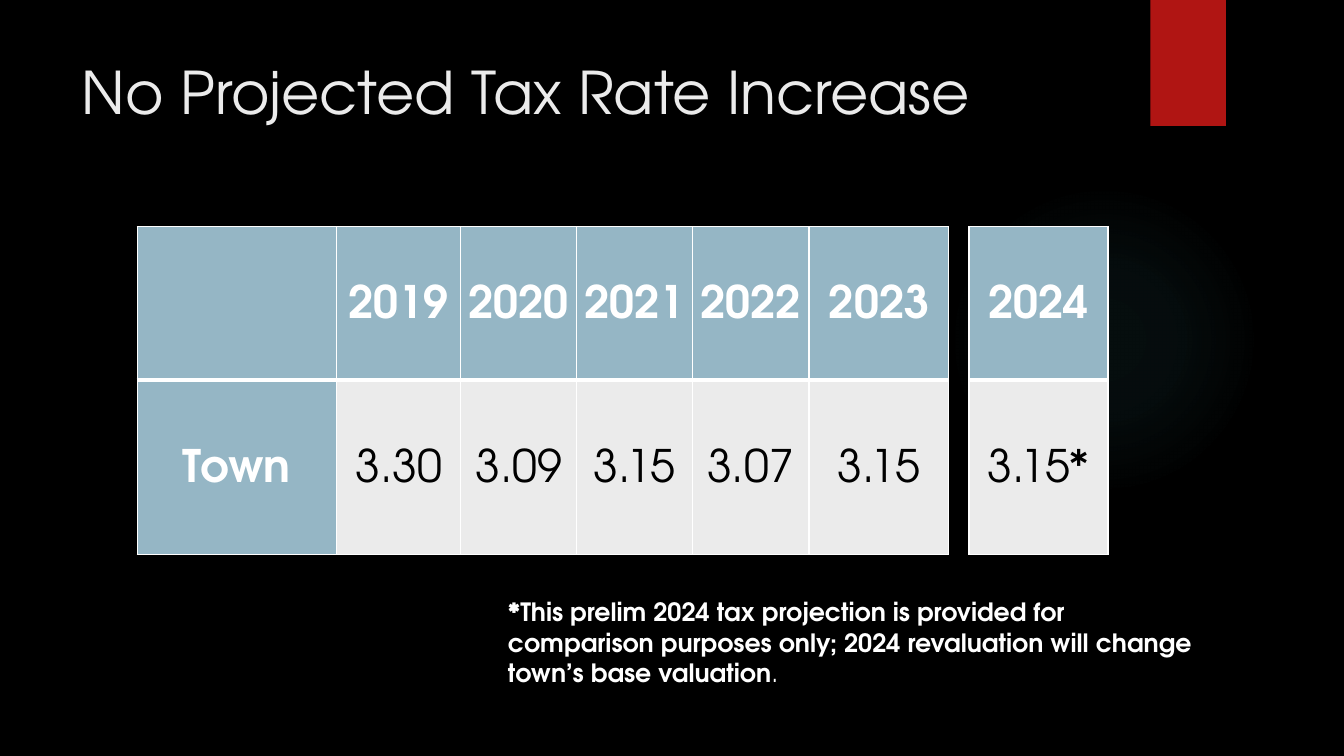
from pptx import Presentation, oxml, util as u
from pptx.dml.color import RGBColor
from pptx.enum import shapes, text
from pptx.oxml import ns

PX = 9144
FONT = "TeX Gyre Adventor"
COLORS = {
    "background": "000000",
    "glow": "50B9C1",
    "ribbon": "B01513",
    "title": "EBEBEB",
    "header": "95B6C5",
    "body": "EBEBEB",
    "light": "FFFFFF",
    "dark": "000000",
}


def px(*lengths):
    return [u.Emu(length * PX) for length in lengths]


def write(paragraph, content, size, color, bold=False):
    run = paragraph.add_run()
    run.text = content
    run.font.name = FONT
    run.font.size = u.Pt(size)
    run.font.bold = bold
    run.font.color.rgb = RGBColor.from_string(COLORS[color])


presentation = Presentation()
presentation.slide_width, presentation.slide_height = px(1333, 750)
slide = presentation.slides.add_slide(presentation.slide_layouts[6])
slide.background.fill.solid()
slide.background.fill.fore_color.rgb = RGBColor.from_string(COLORS["background"])

glow = slide.shapes.add_shape(shapes.MSO_SHAPE.OVAL, *px(941, 183, 308, 308))
glow.shadow.inherit = False
glow.line.fill.background()
stops = "".join(
    f'<a:gs pos="{position * 1000}"><a:srgbClr val="{COLORS["glow"]}">'
    f'<a:alpha val="{alpha * 1000}"/></a:srgbClr></a:gs>'
    for position, alpha in [(0, 7), (36, 6), (69, 0)]
)
gradient = oxml.parse_xml(
    f'<a:gradFill {ns.nsdecls("a")}><a:gsLst>{stops}</a:gsLst><a:path path="circle">'
    '<a:fillToRect l="50000" t="50000" r="50000" b="50000"/></a:path></a:gradFill>'
)
glow.element.spPr.find(ns.qn("a:prstGeom")).addnext(gradient)

ribbon = slide.shapes.add_shape(shapes.MSO_SHAPE.RECTANGLE, *px(1141, 0, 75, 125))
ribbon.shadow.inherit = False
ribbon.line.fill.background()
ribbon.fill.solid()
ribbon.fill.fore_color.rgb = RGBColor.from_string(COLORS["ribbon"])

title = slide.shapes.add_textbox(*px(71, 50, 1029, 153)).text_frame
title.word_wrap = True
write(title.paragraphs[0], "No Projected Tax Rate Increase", 42, "title")

row_heights = [152, 173]
tables = [
    (136, [198, 123, 115, 115, 115], [["", "2019", "2020", "2021", "2022"],
                                      ["Town", "3.30", "3.09", "3.15", "3.07"]]),
    (803, [138], [["2023"], ["3.15"]]),
    (961, [138], [["2024"], ["3.15*"]]),
]
for left, column_widths, rows in tables:
    frame = slide.shapes.add_table(
        len(rows), len(column_widths),
        *px(left, 225, sum(column_widths), sum(row_heights)),
    )
    table = frame.table
    for column, width in zip(table.columns, px(*column_widths)):
        column.width = width
    for row, height in zip(table.rows, px(*row_heights)):
        row.height = height
    for row_index, values in enumerate(rows):
        for column_index, value in enumerate(values):
            cell = table.cell(row_index, column_index)
            is_header = row_index == 0 or value == "Town"
            borders = {"L": 1, "R": 1, "T": 1, "B": 1}
            borders["B" if row_index == 0 else "T"] = 3
            properties = cell._tc.get_or_add_tcPr()
            for side, points in borders.items():
                properties.append(oxml.parse_xml(
                    f'<a:ln{side} {ns.nsdecls("a")} w="{u.Pt(points)}"><a:solidFill>'
                    f'<a:srgbClr val="{COLORS["light"]}"/></a:solidFill></a:ln{side}>'
                ))
            cell.fill.solid()
            cell.fill.fore_color.rgb = RGBColor.from_string(
                COLORS["header" if is_header else "body"]
            )
            cell.vertical_anchor = text.MSO_ANCHOR.MIDDLE
            cell.margin_left, cell.margin_right, cell.margin_top, cell.margin_bottom = px(7, 7, 0, 0)
            if value:
                paragraph = cell.text_frame.paragraphs[0]
                paragraph.alignment = text.PP_ALIGN.CENTER
                paragraph.line_spacing = 1.15
                write(paragraph, value, 32, "light" if is_header else "dark", bold=is_header)

footnote = slide.shapes.add_textbox(*px(494, 587, 720, 101)).text_frame
footnote.word_wrap = True
footnote.auto_size = text.MSO_AUTO_SIZE.SHAPE_TO_FIT_TEXT
write(
    footnote.paragraphs[0],
    "*This prelim 2024 tax projection is provided for comparison purposes only; "
    "2024 revaluation will change town’s base valuation",
    18, "light", bold=True,
)
write(footnote.paragraphs[0], ".", 18, "light")

presentation.save("out.pptx")
